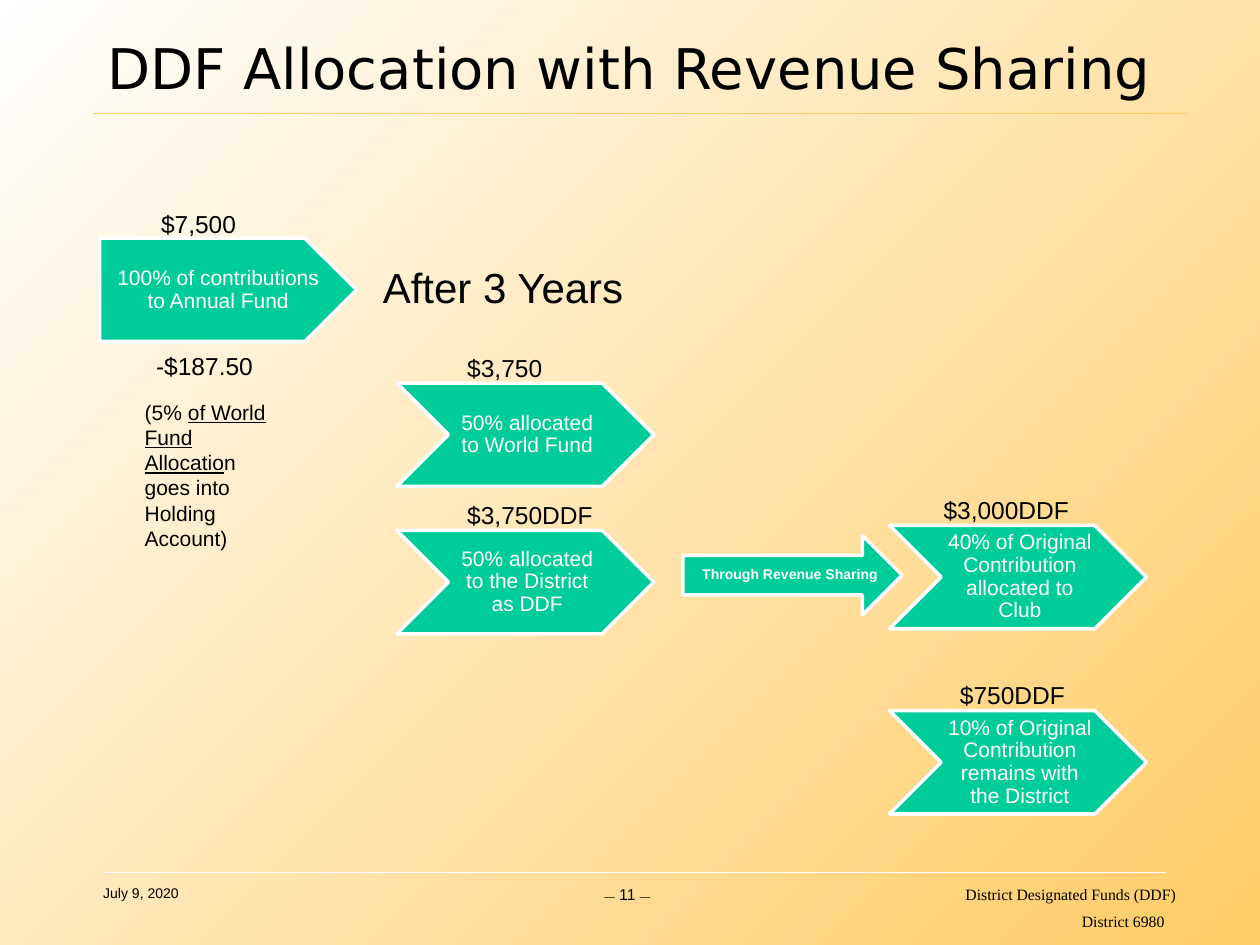
from lxml.etree import SubElement
from pptx import Presentation
from pptx.dml.color import RGBColor
from pptx.enum.shapes import MSO_CONNECTOR, MSO_SHAPE
from pptx.enum.text import MSO_ANCHOR, MSO_AUTO_SIZE, PP_ALIGN
from pptx.oxml.ns import qn
from pptx.util import Inches, Pt

COLORS = {"text": "000000", "light": "FFFFFF", "gold": "FFCC66", "arrow": "00CC99"}
STEP_SIZE = (2.04, 0.82)
STEP_INSETS = (0.05, 0.04, 0.02, 0.04)


def color(name):
    return RGBColor.from_string(COLORS[name])


def format_run(run, size, font="Arial", ink="text", bold=False):
    run.font.size = Pt(size)
    run.font.name = font
    run.font.bold = bold
    run.font.color.rgb = color(ink)


def add_text(slide, box, runs, align=PP_ALIGN.LEFT, wrap=False):
    frame = slide.shapes.add_textbox(*map(Inches, box)).text_frame
    frame.word_wrap = wrap
    paragraph = frame.paragraphs[0]
    paragraph.alignment = align
    for text, size, underline in runs:
        run = paragraph.add_run()
        run.text = text
        format_run(run, size)
        run.font.underline = underline
    return frame


def add_label(slide, box, text, size=14):
    add_text(slide, box, [(text, size, False)])


def add_rule(slide, left, right, top, ink):
    rule = slide.shapes.add_connector(
        MSO_CONNECTOR.STRAIGHT, Inches(left), Inches(top), Inches(right), Inches(top))
    rule.line.color.rgb = color(ink)
    rule.line.width = Pt(0.25)
    SubElement(rule._element.spPr, qn("a:effectLst"))


def add_arrow(slide, kind, box, text, insets=STEP_INSETS, size=12, bold=False):
    arrow = slide.shapes.add_shape(kind, *map(Inches, box))
    arrow.shadow.inherit = False
    arrow.fill.solid()
    arrow.fill.fore_color.rgb = color("arrow")
    arrow.line.color.rgb = color("light")
    arrow.line.width = Pt(2)
    frame = arrow.text_frame
    frame.text = text
    frame.word_wrap = True
    frame.vertical_anchor = MSO_ANCHOR.MIDDLE
    (frame.margin_left, frame.margin_top,
     frame.margin_right, frame.margin_bottom) = map(Inches, insets)
    paragraph = frame.paragraphs[0]
    paragraph.alignment = PP_ALIGN.CENTER
    paragraph.line_spacing = 0.9
    format_run(paragraph.runs[0], size, ink="light", bold=bold)


def paint_background(slide):
    fill = slide.background.fill
    fill.gradient()
    fill.gradient_angle = 315
    for stop, ink, position in zip(fill.gradient_stops, ("light", "gold"), (0, 1)):
        stop.color.rgb = color(ink)
        stop.position = position


def add_header(slide, box):
    title = slide.shapes.title
    title.left, title.top, title.width, title.height = map(Inches, box)
    frame = title.text_frame
    frame.text = "DDF Allocation with Revenue Sharing"
    frame.auto_size = MSO_AUTO_SIZE.NONE
    frame.vertical_anchor = MSO_ANCHOR.MIDDLE
    frame.paragraphs[0].alignment = PP_ALIGN.LEFT
    format_run(frame.paragraphs[0].runs[0], 32, "DejaVu Sans")
    add_rule(slide, 0.74, 9.42, 0.9, "gold")


def add_footer(slide, left, top, right):
    add_rule(slide, 0.82, 9.25, 6.92, "light")
    add_text(slide, (left, top, 2.08, 0.23), [("July 9, 2020", 8, False)], wrap=True)
    add_text(slide, (4.61, top, 0.74, 0.28),
             [("—", 6, False), (" 11 ", 9, False), ("—", 6, False)],
             PP_ALIGN.CENTER, wrap=True)
    width = 2.18
    source = slide.shapes.add_textbox(
        *map(Inches, (right - width, top, width, 0.48))).text_frame
    source.word_wrap = True
    source.text = "District Designated Funds (DDF)\nDistrict 6980"
    for paragraph in source.paragraphs:
        paragraph.alignment = PP_ALIGN.RIGHT
        format_run(paragraph.runs[0], 9, "Times New Roman")
    district = source.paragraphs[1]
    district.space_before = Pt(4.5)
    district._p.get_or_add_pPr().set("marR", str(Inches(0.09)))


def add_contribution(slide, left, top):
    add_arrow(slide, MSO_SHAPE.PENTAGON, (left, top, *STEP_SIZE),
              "100% of contributions to Annual Fund", (0.07, 0.04, 0.02, 0.04))
    add_label(slide, (1.18, top - 0.28, 0.8, 0.34), "$7,500")
    add_label(slide, (1.14, top + 0.85, 0.98, 0.34), "-$187.50")
    add_text(slide, (1.05, top + 1.23, 1.22, 1.31),
             [("(5% ", 12, False), ("of World Fund Allocatio", 12, True),
              ("n goes into Holding Account)", 12, False)], wrap=True)
    add_label(slide, (2.94, 2.03, 2.13, 0.51), "After 3 Years", 24)


def add_allocations(slide, left, allocations):
    for top, text, amount, label_left, label_width in allocations:
        add_arrow(slide, MSO_SHAPE.CHEVRON, (left, top, *STEP_SIZE), text)
        add_label(slide, (label_left, top - 0.29, label_width, 0.34), amount)


def main():
    prs = Presentation()
    prs.slide_width, prs.slide_height = Inches(10), Inches(7.5)
    slide = prs.slides.add_slide(prs.slide_layouts[5])
    paint_background(slide)
    add_header(slide, (0.75, 0.23, 8.67, 0.6))
    add_footer(slide, 0.72, 6.97, 9.43)
    add_contribution(slide, 0.79, 1.89)
    add_allocations(slide, 3.15, [
        (3.04, "50% allocated to World Fund", "$3,750", 3.61, 0.8),
        (4.21, "50% allocated to the District as DDF", "$3,750DDF", 3.61, 1.2),
    ])
    add_allocations(slide, 7.06, [
        (4.17, "40% of Original Contribution allocated to Club", "$3,000DDF", 7.39, 1.2),
        (5.64, "10% of Original Contribution remains with the District",
         "$750DDF", 7.52, 1.04),
    ])
    add_arrow(slide, MSO_SHAPE.RIGHT_ARROW, (5.42, 4.25, 1.74, 0.63),
              "Through Revenue Sharing", (0.14, 0.09, 0.02, 0.09), 8, True)
    prs.save("out.pptx")


if __name__ == "__main__":
    main()
